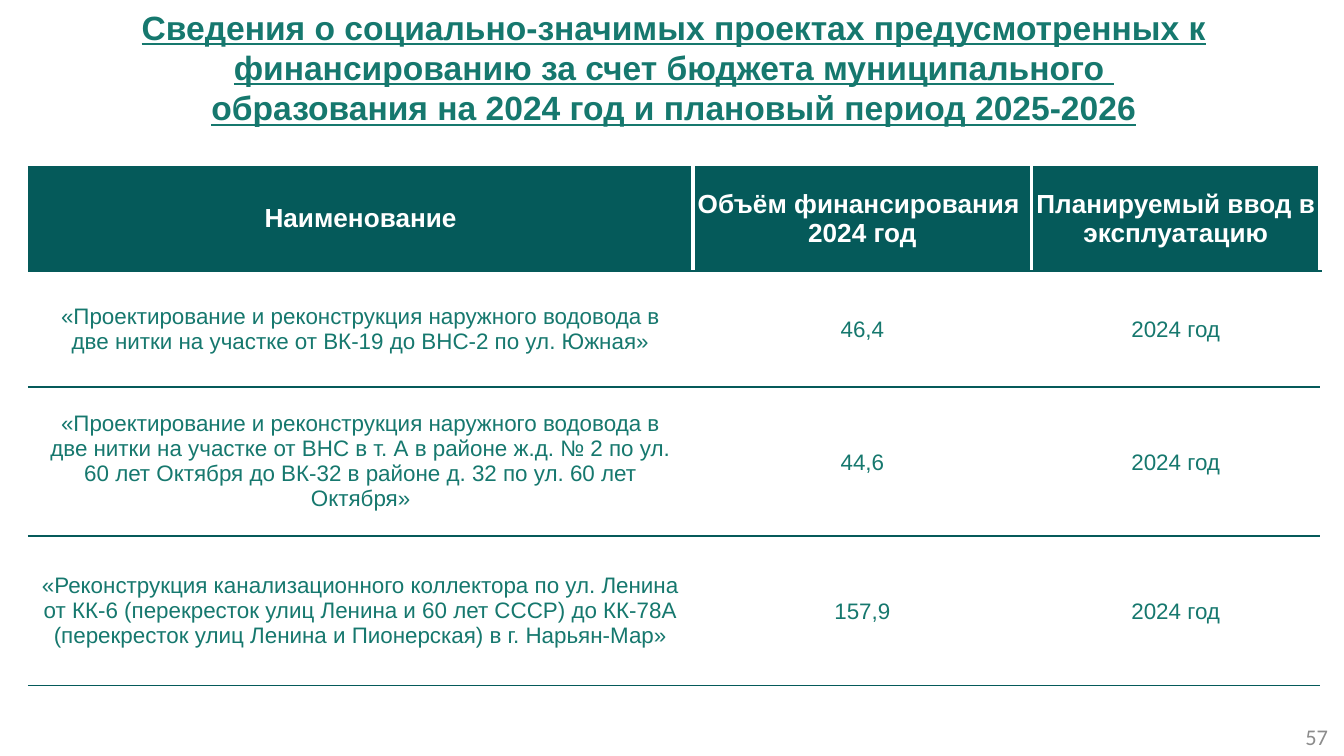
from lxml import etree
from pptx import Presentation
from pptx.dml.color import RGBColor
from pptx.enum.text import MSO_ANCHOR, PP_ALIGN
from pptx.oxml.ns import qn
from pptx.util import Pt

CENTER = PP_ALIGN.CENTER
RIGHT = PP_ALIGN.RIGHT
MIDDLE = MSO_ANCHOR.MIDDLE
TOP = MSO_ANCHOR.TOP

WHITE = RGBColor(0xFF, 0xFF, 0xFF)
GRAY = RGBColor(0x8C, 0x8C, 0x8C)
TEAL = RGBColor(0x16, 0x78, 0x6E)
DARK_TEAL = RGBColor(0x05, 0x5A, 0x5A)

PLAIN_TABLE_STYLE = "{2D5ABB26-0587-4C30-8999-92F81FD0307C}"
WIDE_MARGINS = (7.2, 3.6, 7.2, 3.6)
HEADER_MARGINS = (0, 3.6, 0, 3.6)
VALUE_MARGINS = (0.72, 0.72, 0.72, 0)

TITLE = [
    "Сведения о социально-значимых проектах предусмотренных к "
    "финансированию за счет бюджета муниципального ",
    "образования на 2024 год и плановый период 2025-2026",
]
HEADERS = [
    ["Наименование"],
    ["Объём финансирования ", "2024 год"],
    ["Планируемый ввод в эксплуатацию"],
]
PROJECTS = [
    ("«Проектирование и реконструкция наружного водовода в две нитки "
     "на участке от ВК-19 до ВНС-2 по ул. Южная»", "46,4", "2024 год"),
    ("«Проектирование и реконструкция наружного водовода в две нитки "
     "на участке от ВНС в т. А в районе ж.д. № 2 по ул. 60 лет Октября "
     "до ВК-32 в районе д. 32 по ул. 60 лет Октября»", "44,6", "2024 год"),
    ("«Реконструкция канализационного коллектора по ул. Ленина от КК-6 "
     "(перекресток улиц Ленина и 60 лет СССР) до КК-78А "
     "(перекресток улиц Ленина и Пионерская) в г. Нарьян-Мар»",
     "157,9", "2024 год"),
]
COLUMN_WIDTHS = [356.4, 181.2, 154.6]
ROW_HEIGHTS = [56, 62, 80, 80]


def write_text(text_frame, lines, size, color, bold=False, underline=False,
               font_name="Arial", alignment=CENTER):
    text_frame.text = "\n".join(lines)
    for paragraph in text_frame.paragraphs:
        paragraph.alignment = alignment
        for run in paragraph.runs:
            run.font.name = font_name
            run.font.size = Pt(size)
            run.font.bold = bold
            run.font.underline = underline
            run.font.color.rgb = color


def add_text_box(slide, box, anchor):
    text_frame = slide.shapes.add_textbox(*map(Pt, box)).text_frame
    text_frame.word_wrap = True
    text_frame.vertical_anchor = anchor
    return text_frame


def add_title(slide, box):
    write_text(add_text_box(slide, box, TOP), TITLE, 18, TEAL,
               bold=True, underline=True)


def add_page_number(slide, box):
    write_text(add_text_box(slide, box, MIDDLE), ["57"], 12, GRAY,
               font_name="Calibri", alignment=RIGHT)


def add_border(cell, side, color, width):
    properties = cell._tc.get_or_add_tcPr()
    line = etree.SubElement(properties, qn(f"a:ln{side}"), w=str(Pt(width)))
    fill = etree.SubElement(line, qn("a:solidFill"))
    etree.SubElement(fill, qn("a:srgbClr"), val=str(color))


def set_margins(cell, margins):
    (cell.margin_left, cell.margin_top,
     cell.margin_right, cell.margin_bottom) = map(Pt, margins)
    cell.vertical_anchor = MIDDLE


def fill_header_cell(cell, lines, column):
    set_margins(cell, HEADER_MARGINS if column else WIDE_MARGINS)
    write_text(cell.text_frame, lines, 14, WHITE, bold=True)
    if column:
        add_border(cell, "L", WHITE, 2.25)
    add_border(cell, "R", WHITE, 2.25)
    add_border(cell, "T", DARK_TEAL, 1)
    add_border(cell, "B", DARK_TEAL, 1)
    cell.fill.solid()
    cell.fill.fore_color.rgb = DARK_TEAL


def fill_project_cell(cell, text, column):
    set_margins(cell, VALUE_MARGINS if column else WIDE_MARGINS)
    write_text(cell.text_frame, [text], 12, TEAL)
    add_border(cell, "T", DARK_TEAL, 1)
    add_border(cell, "B", DARK_TEAL, 1)
    cell.fill.background()


def add_project_table(slide, box):
    frame = slide.shapes.add_table(len(ROW_HEIGHTS), len(COLUMN_WIDTHS),
                                   *map(Pt, box))
    table = frame.table
    table.first_row = False
    table.horz_banding = False
    for style in table._tbl.iter(qn("a:tableStyleId")):
        style.text = PLAIN_TABLE_STYLE
    for column, width in zip(table.columns, COLUMN_WIDTHS):
        column.width = Pt(width)
    for row, height in zip(table.rows, ROW_HEIGHTS):
        row.height = Pt(height)
    for column, lines in enumerate(HEADERS):
        fill_header_cell(table.cell(0, column), lines, column)
    for row, project in enumerate(PROJECTS, start=1):
        for column, text in enumerate(project):
            fill_project_cell(table.cell(row, column), text, column)


def main():
    presentation = Presentation()
    presentation.slide_width = Pt(720)
    presentation.slide_height = Pt(405)
    slide = presentation.slides.add_slide(presentation.slide_layouts[6])
    add_page_number(slide, (684, 384, 34.5, 21.6))
    add_title(slide, (2, 0, 718, 72.7))
    add_project_table(slide, (15, 89.3, 692.2, 278))
    presentation.save("out.pptx")


if __name__ == "__main__":
    main()
